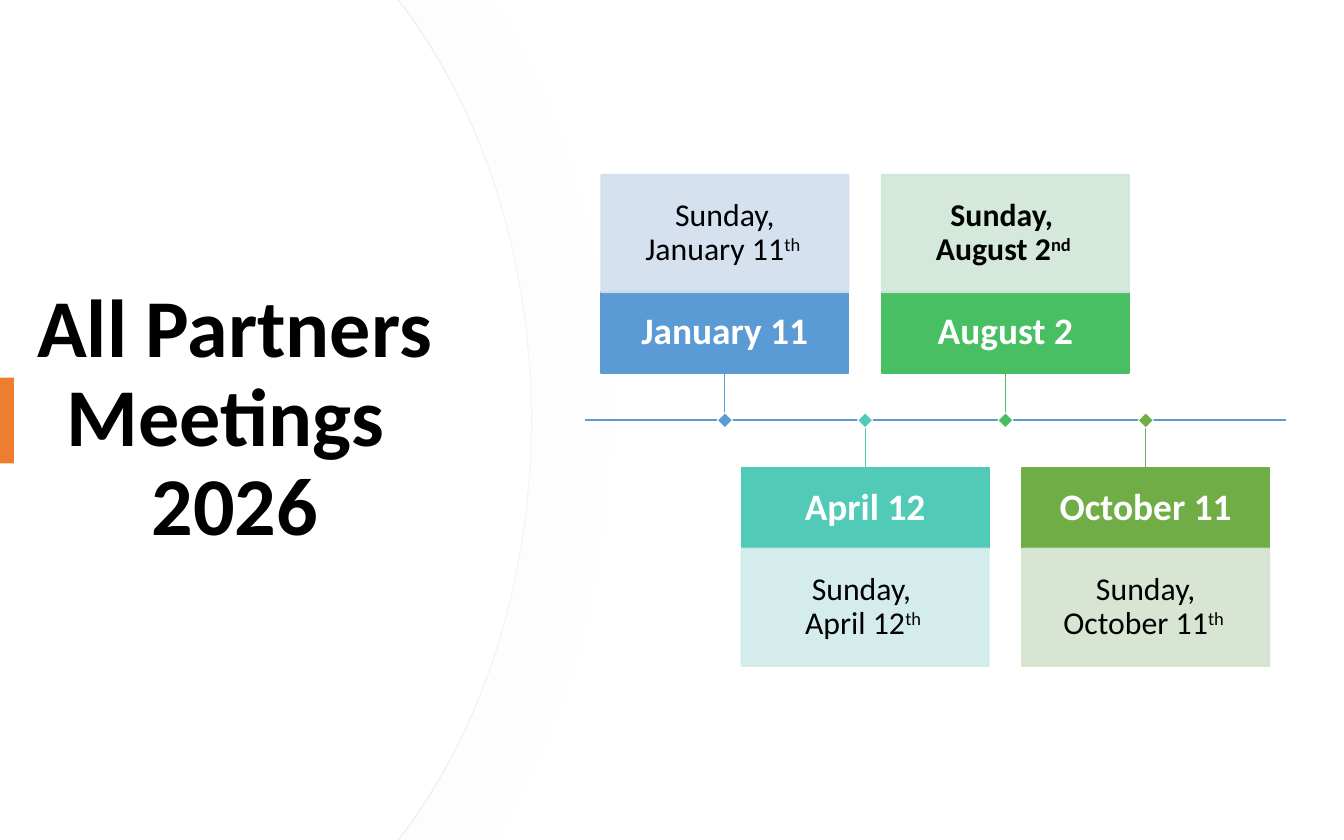
from pptx import Presentation
from pptx.dml.color import RGBColor
from pptx.enum.shapes import MSO_CONNECTOR as CONN, MSO_SHAPE as SHAPE
from pptx.enum.text import MSO_ANCHOR as ANCHOR, PP_ALIGN as ALIGN
from pptx.oxml import parse_xml
from pptx.oxml.ns import nsdecls, qn
from pptx.util import Pt

FONT = "Calibri"
AXIS_Y = 225.2
CARD_LEFT, CARD_STEP, CARD_W = 322.1, 75.15, 132.5
HEAD_H, BODY_H, STEM = 43.3, 63, 25.3
MEETINGS = [
    # heading, day, superscript, bold day, strong colour, pale colour
    ("January 11", "Sunday, January 11", "th ", False, "5B9BD5", "D2DEEF"),
    ("April 12", "Sunday, \vApril 12", "th ", False, "52CAB8", "D0ECEA"),
    ("August 2", "Sunday, \vAugust 2", "nd ", True, "49BF64", "D0E7D8"),
    ("October 11", "Sunday, October 11", "th ", False, "70AD47", "D5E3CF"),
]


def rgb(color):
    return RGBColor.from_string(color)


def paint(sp, fill, line=None, width=1, alpha=None):
    """Set fill and line; alpha is the opacity of both in percent."""
    sp.shadow.inherit = False
    sp.fill.solid()
    sp.fill.fore_color.rgb = rgb(fill)
    if line:
        sp.line.color.rgb = rgb(line)
        sp.line.width = Pt(width)
    else:
        sp.line.fill.background()
    if alpha:
        for clr in sp._element.spPr.iter(qn("a:srgbClr")):
            clr.append(parse_xml(f'<a:alpha {nsdecls("a")} val="{alpha * 1000}"/>'))


def add_rect(s, x, y, w, h, fill, line=None, width=1, alpha=None):
    sp = s.shapes.add_shape(SHAPE.RECTANGLE, Pt(x), Pt(y), Pt(w), Pt(h))
    paint(sp, fill, line, width, alpha)
    return sp


def add_line(s, x1, y1, x2, y2, color, width):
    c = s.shapes.add_connector(CONN.STRAIGHT, Pt(x1), Pt(y1), Pt(x2), Pt(y2))
    c.line.color.rgb = rgb(color)
    c.line.width = Pt(width)
    c._element.spPr.append(parse_xml(f'<a:effectLst {nsdecls("a")}/>'))


def add_text(s, x, y, w, h, text, size, color, bold, inset, superscript=None):
    sp = s.shapes.add_textbox(Pt(x), Pt(y), Pt(w), Pt(h))
    tf = sp.text_frame
    tf.word_wrap = True
    tf.vertical_anchor = ANCHOR.MIDDLE
    tf.margin_left = tf.margin_right = Pt(inset)
    tf.margin_top = tf.margin_bottom = Pt(inset)
    p = tf.paragraphs[0]
    p.text = text
    p.alignment = ALIGN.CENTER
    p.line_spacing = 0.9
    if superscript:
        r = p.add_run()
        r.text = superscript
        r.font._element.set("baseline", "30000")
    for r in p.runs:
        r.font.name = FONT
        r.font.size = Pt(size)
        r.font.bold = bold
        r.font.color.rgb = rgb(color)


def bend(sp, start, count):
    """Turn each three line segments from start on into one cubic curve."""
    segments = list(sp._element.iter(qn("a:lnTo")))
    for i in range(start, start + 3 * count, 3):
        curve = parse_xml(f'<a:cubicBezTo {nsdecls("a")}/>')
        segments[i].addprevious(curve)
        for segment in segments[i:i + 3]:
            curve.append(segment[0])
            segment.getparent().remove(segment)


def add_curved_panel(s, corner_x):
    """White panel on the left edge with a bulging right side."""
    upper = [(corner_x, 0), (corner_x + 3.6, 4.3), (258.5, 61.2), (284.4, 139)]
    lower = [(x, 450 - y) for x, y in reversed(upper)]
    outline = upper + [(284.4, 225)] + lower + [(0, 450)]
    fb = s.shapes.build_freeform(0, 0)
    fb.add_line_segments([(Pt(x), Pt(y)) for x, y in outline])
    sp = fb.convert_to_shape()
    bend(sp, 2, 2)
    return sp


def add_shadow(sp):
    sp._element.spPr.find(qn("a:effectLst")).append(parse_xml(
        f'<a:outerShdw {nsdecls("a")} blurRad="{Pt(50)}" dist="{Pt(3)}" dir="0">'
        '<a:srgbClr val="D9D9D9"><a:alpha val="7000"/></a:srgbClr></a:outerShdw>'))


def add_title_panel(s):
    panel = add_curved_panel(s, 213.1)
    paint(panel, "FFFFFF", "EFEFEF", 0.75)
    add_shadow(panel)
    paint(add_curved_panel(s, 212.4), "FFFFFF")
    add_text(s, 0, 76.5, 252, 297, "All Partners Meetings \v2026", 44, "000000", True, 5)
    add_rect(s, 0, 202.3, 7.4, 46, "ED7D31")


def add_meeting(s, index, heading, day, superscript, bold, strong, pale):
    """Card above the axis for even indexes, below it for odd ones."""
    x = CARD_LEFT + index * CARD_STEP
    side = 1 if index % 2 else -1
    head_y = AXIS_Y + STEM if side > 0 else AXIS_Y - STEM - HEAD_H
    body_y = head_y + HEAD_H if side > 0 else head_y - BODY_H
    head, body = (x, head_y, CARD_W, HEAD_H), (x, body_y, CARD_W, BODY_H)
    add_rect(s, *head, strong, strong)
    add_text(s, *head, heading, 20, "FFFFFF", True, 8)
    add_rect(s, *body, pale, pale, alpha=90)
    add_text(s, *body, day, 17, "000000", bold, 13, superscript)
    center = x + CARD_W / 2
    add_line(s, center, AXIS_Y, center, AXIS_Y + side * STEM, strong, 0.5)
    marker = add_rect(s, center - 2.9, AXIS_Y - 2.9, 5.8, 5.8, strong, "FFFFFF", 0.5)
    marker.rotation = 45


def main():
    prs = Presentation()
    prs.slide_width, prs.slide_height = Pt(720), Pt(450)
    s = prs.slides.add_slide(prs.slide_layouts[6])
    add_title_panel(s)
    add_line(s, 313.3, AXIS_Y, 689, AXIS_Y, "5B9BD5", 1)
    for index, meeting in enumerate(MEETINGS):
        add_meeting(s, index, *meeting)
    prs.save("out.pptx")


if __name__ == "__main__":
    main()
